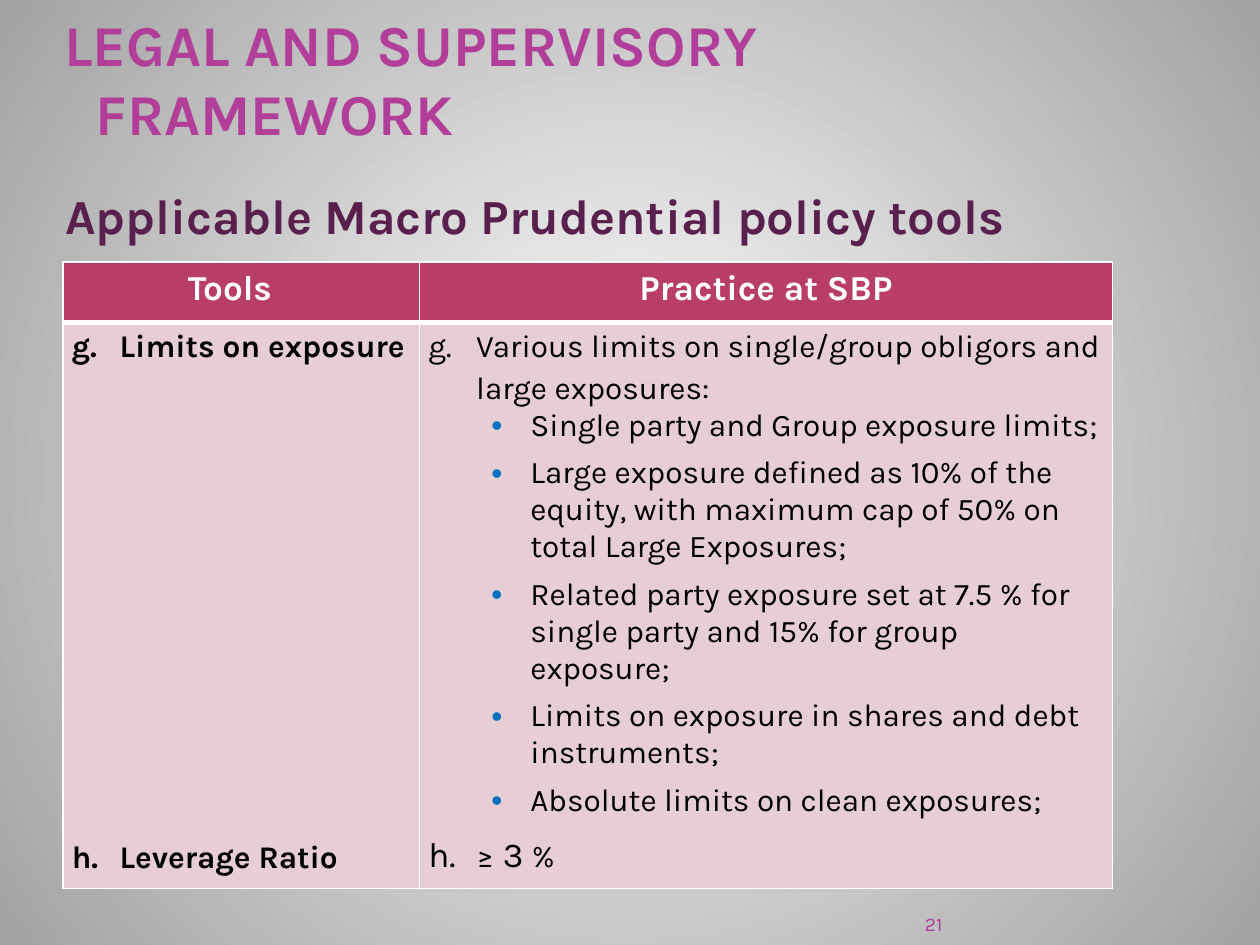
from lxml import etree
from pptx import Presentation
from pptx.dml.color import RGBColor
from pptx.enum import text
from pptx.oxml import parse_xml
from pptx.oxml.ns import nsdecls, qn
from pptx.util import Inches, Pt

FONT = "Karla"
WHITE = RGBColor(0xFF, 0xFF, 0xFF)
GREY = RGBColor(0xA2, 0xA2, 0xA2)
BLACK = RGBColor(0, 0, 0)
MAGENTA = RGBColor(0xB1, 0x3F, 0x9A)
PLUM = RGBColor(0x59, 0x1F, 0x4D)
ROSE = RGBColor(0xB8, 0x3D, 0x68)
PINK = RGBColor(0xE6, 0xCE, 0xD4)
BLUE = RGBColor(0x00, 0x70, 0xC0)

LETTER = dict(margin=0.38, indent=-0.38, marker="letter")
BULLET = dict(margin=0.81, indent=-0.31, marker="bullet", level=1)
LOOSE = dict(line_spacing=1.15)
ITEM_GAP = dict(space_after=Pt(6))

LIMITS = [
    "Single party and Group exposure limits;",
    "Large exposure defined as 10% of the equity, with maximum cap of 50% on total Large Exposures;",
    "Related party exposure set at 7.5 % for single party and 15% for group exposure;",
    "Limits on exposure in shares and debt instruments;",
    "Absolute limits on clean exposures;",
]


def apply(target, values):
    for name, value in values.items():
        setattr(target, name, value)


def set_list(para, margin, indent, marker=None, level=0):
    """Indent a paragraph (inches) and give it a letter from g. on or a bullet."""
    para.level = level
    props = para._p.get_or_add_pPr()
    props.set("marL", str(Inches(margin)))
    props.set("indent", str(Inches(indent)))
    if marker == "letter":
        etree.SubElement(props, qn("a:buFont"), typeface="+mj-lt")
        etree.SubElement(props, qn("a:buAutoNum"), type="alphaLcPeriod", startAt="7")
    elif marker == "bullet":
        colour = etree.SubElement(props, qn("a:buClr"))
        etree.SubElement(colour, qn("a:srgbClr"), val=str(BLUE))
        etree.SubElement(props, qn("a:buFont"), typeface="Arial")
        etree.SubElement(props, qn("a:buChar"), char="•")


def write(para, spans, colour, bold=False, layout=None, **spacing):
    """Fill a paragraph with (wording, size) spans."""
    if layout:
        set_list(para, **layout)
    apply(para, spacing)
    for wording, size in spans:
        span = para.add_run()
        span.text = wording
        apply(span.font, dict(name=FONT, size=Pt(size), bold=bold))
        span.font.color.rgb = colour


def write_all(frame, paragraphs):
    for index, values in enumerate(paragraphs):
        write(frame.add_paragraph() if index else frame.paragraphs[0], **values)


def add_label(page, box, values, **frame_format):
    frame = page.shapes.add_textbox(*map(Inches, box)).text_frame
    apply(frame, dict(word_wrap=True, **frame_format))
    write_all(frame, [values])


def set_background(page):
    page.background.fill.solid()
    props = page.background._cSld.find(qn("p:bg")).find(qn("p:bgPr"))
    gradient = parse_xml(
        f'<a:gradFill {nsdecls("a")} rotWithShape="1"><a:gsLst>'
        f'<a:gs pos="0"><a:srgbClr val="{WHITE}"/></a:gs>'
        f'<a:gs pos="100000"><a:srgbClr val="{GREY}"/></a:gs></a:gsLst>'
        '<a:path path="circle"><a:fillToRect l="50000" t="50000" r="50000" b="50000"/>'
        "</a:path></a:gradFill>")
    props.replace(props.find(qn("a:solidFill")), gradient)


def style_cell(cell, colour, top, bottom):
    """Fill a cell and draw its white borders; top and bottom are in points."""
    cell.fill.solid()
    cell.fill.fore_color.rgb = colour
    props = cell._tc.get_or_add_tcPr()
    for index, (side, width) in enumerate(zip("LRTB", (1, 1, top, bottom))):
        props.insert(index, parse_xml(
            f'<a:ln{side} {nsdecls("a")} w="{Pt(width)}"><a:solidFill>'
            f'<a:srgbClr val="{WHITE}"/></a:solidFill></a:ln{side}>'))


def add_tools_table(page, box):
    table = page.shapes.add_table(2, 2, *map(Inches, box)).table
    table.horz_banding = False
    for column, width in zip(table.columns, (2.83, 5.5)):
        column.width = Inches(width)
    for row, height in zip(table.rows, (0.48, 4.48)):
        row.height = Inches(height)

    header = dict(colour=WHITE, bold=True)
    tool = dict(colour=BLACK, bold=True, layout=LETTER, **LOOSE)
    practice = dict(colour=BLACK, layout=LETTER, **LOOSE)
    contents = [
        [[dict(spans=[("Tools", 20)], layout=dict(margin=0.89, indent=0), **header)],
         [dict(spans=[("Practice at SBP", 20)], alignment=text.PP_ALIGN.CENTER, **header)]],
        [[dict(spans=[("Limits on exposure", 18)], **tool),
          dict(spans=[("Leverage Ratio", 18)], space_before=Pt(268), **tool)],
         [dict(spans=[("Various limits on single/group obligors and large exposures:", 18)],
               **practice),
          *(dict(spans=[(limit, 18)], colour=BLACK, layout=BULLET, **ITEM_GAP)
            for limit in LIMITS),
          dict(spans=[("≥ 3 ", 20), ("%", 18)], **practice)]],
    ]
    looks = [(ROSE, 1, 3), (PINK, 3, 1)]
    for row, (row_contents, look) in enumerate(zip(contents, looks)):
        for column, paragraphs in enumerate(row_contents):
            cell = table.cell(row, column)
            style_cell(cell, *look)
            if row:
                apply(cell, dict(margin_left=Inches(0.07), margin_right=Inches(0.07),
                                 margin_top=0, margin_bottom=0))
            write_all(cell.text_frame, paragraphs)


def main():
    deck = Presentation()
    apply(deck, dict(slide_width=Inches(10), slide_height=Inches(7.5)))
    page = deck.slides.add_slide(deck.slide_layouts[6])
    set_background(page)
    bottom = dict(vertical_anchor=text.MSO_ANCHOR.BOTTOM, margin_top=0, margin_bottom=0)
    add_label(page, (6.84, 7.17, 0.64, 0.25),
              dict(spans=[("21", 11)], colour=MAGENTA, alignment=text.PP_ALIGN.RIGHT),
              margin_left=0, margin_right=0, **bottom)
    add_tools_table(page, (0.5, 2.08, 8.33, 4.96))
    add_label(page, (0.33, 0.52, 8.67, 0.65),
              dict(spans=[("LEGAL AND SUPERVISORY FRAMEWORK", 33)], colour=MAGENTA,
                   bold=True, layout=dict(margin=0.38, indent=-0.25)),
              margin_left=Inches(0.05), margin_right=Inches(0.3), **bottom)
    add_label(page, (0.42, 1.42, 8.42, 0.57),
              dict(spans=[("Applicable Macro Prudential policy tools", 28)],
                   colour=PLUM, bold=True, **ITEM_GAP))
    deck.save("out.pptx")


if __name__ == "__main__":
    main()
